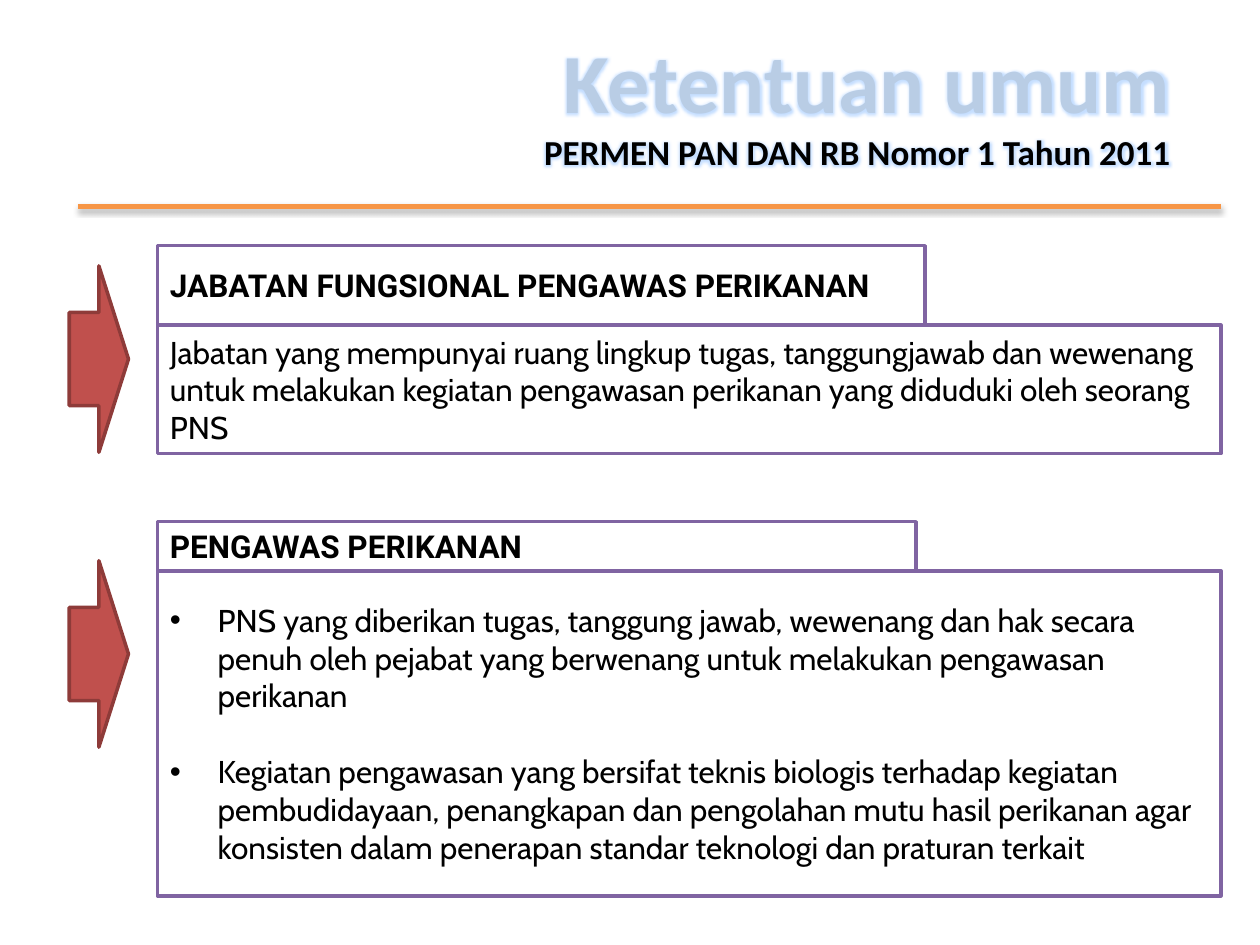
from lxml import etree
from pptx import Presentation
from pptx.dml.color import RGBColor
from pptx.enum.shapes import MSO_CONNECTOR, MSO_SHAPE
from pptx.enum.text import MSO_ANCHOR, PP_ALIGN
from pptx.oxml.ns import qn
from pptx.util import Inches, Pt

RECTANGLE, RIGHT_ARROW = MSO_SHAPE.RECTANGLE, MSO_SHAPE.RIGHT_ARROW
STRAIGHT = MSO_CONNECTOR.STRAIGHT
MIDDLE, BOTTOM = MSO_ANCHOR.MIDDLE, MSO_ANCHOR.BOTTOM
LEFT, RIGHT = PP_ALIGN.LEFT, PP_ALIGN.RIGHT

COLORS = {
    "white": "FFFFFF",
    "black": "000000",
    "title": "B9CDE5",
    "glow": "9FC9FF",
    "rule": "F79646",
    "border": "8064A2",
    "arrow": "C0504D",
    "arrow_border": "8E3B39",
}
BOX_LEFT = 1.25
BODY_WIDTH = 8.44


def rgb(name):
    return RGBColor.from_string(COLORS[name])


def add_effect(parent, kind, color, alpha, **attributes):
    effects = etree.SubElement(parent, qn("a:effectLst"))
    effect = etree.SubElement(effects, qn(f"a:{kind}"), attributes)
    tint = etree.SubElement(effect, qn("a:srgbClr"), val=COLORS[color])
    etree.SubElement(tint, qn("a:alpha"), val=str(alpha * 1000))
    return effects


def add_run(paragraph, text, font, size, bold=False, color="black"):
    run = paragraph.add_run()
    run.text = text
    run.font.name = font
    run.font.size = Pt(size)
    run.font.bold = bold
    run.font.color.rgb = rgb(color)
    return run


def add_glow(run):
    properties = run.font._element
    effects = add_effect(properties, "glow", "glow", 60, rad=str(Pt(5)))
    properties.find(qn("a:solidFill")).addnext(effects)


def add_bullet(paragraph):
    properties = paragraph._p.get_or_add_pPr()
    properties.set("marL", str(Inches(0.38)))
    properties.set("indent", str(-Inches(0.38)))
    etree.SubElement(properties, qn("a:buFont"), typeface="Arial")
    etree.SubElement(properties, qn("a:buChar"), char="•")


def add_title(slide, title, subtitle):
    box = slide.shapes.add_textbox(Inches(2.34), Inches(0.7), Inches(7.05), Inches(1.17))
    frame = box.text_frame
    frame.word_wrap = True
    frame.vertical_anchor = BOTTOM
    frame.margin_bottom = Inches(0.5)
    heading, subheading = frame.paragraphs[0], frame.add_paragraph()
    heading.alignment = subheading.alignment = RIGHT
    add_glow(add_run(heading, title, "Calibri", 48, True, "title"))
    add_glow(add_run(subheading, subtitle, "Calibri", 20, True))


def add_rule(slide):
    rule = slide.shapes.add_connector(
        STRAIGHT, Inches(0.62), Inches(1.64), Inches(9.69), Inches(1.64))
    rule.line.color.rgb = rgb("rule")
    rule.line.width = Pt(3)
    add_effect(rule._element.spPr, "outerShdw", "black", 35, blurRad=str(Pt(3.1)),
               dist=str(Pt(1.8)), dir="5400000", rotWithShape="0")


def add_figure(slide, kind, left, top, width, height, fill, border):
    shape = slide.shapes.add_shape(
        kind, Inches(left), Inches(top), Inches(width), Inches(height))
    shape.shadow.inherit = False
    shape.fill.solid()
    shape.fill.fore_color.rgb = rgb(fill)
    shape.line.color.rgb = rgb(border)
    shape.line.width = Pt(2)
    return shape


def add_box(slide, top, width, height, texts, font, bold=False, bulleted=False):
    box = add_figure(slide, RECTANGLE, BOX_LEFT, top, width, height, "white", "border")
    frame = box.text_frame
    frame.word_wrap = True
    frame.vertical_anchor = MIDDLE
    for index, text in enumerate(texts):
        paragraph = frame.add_paragraph() if index else frame.paragraphs[0]
        paragraph.alignment = LEFT
        if index:
            paragraph.space_before = Pt(21.8)
        if bulleted:
            add_bullet(paragraph)
        add_run(paragraph, text, font, 18, bold)


def add_definition(slide, top, heading, heading_size, texts, body_height, arrow_top,
                   bulleted=False):
    width, height = heading_size
    add_box(slide, top, width, height, [heading], "Roboto", bold=True)
    add_box(slide, top + height, BODY_WIDTH, body_height, texts, "Cabin", bulleted=bulleted)
    add_figure(slide, RIGHT_ARROW, 0.55, arrow_top, 0.47, 1.48, "arrow", "arrow_border")


def main():
    presentation = Presentation()
    presentation.slide_width = Inches(10)
    presentation.slide_height = Inches(7.5)
    slide = presentation.slides.add_slide(presentation.slide_layouts[6])
    add_title(slide, "Ketentuan umum", "PERMEN PAN DAN RB Nomor 1 Tahun 2011")
    add_rule(slide)
    add_definition(
        slide, 1.95, "JABATAN FUNGSIONAL PENGAWAS PERIKANAN", (6.09, 0.63),
        ["Jabatan yang mempunyai ruang lingkup tugas, tanggungjawab dan wewenang "
         "untuk melakukan kegiatan pengawasan perikanan yang diduduki oleh seorang PNS"],
        1.02, 2.11)
    add_definition(
        slide, 4.14, "PENGAWAS PERIKANAN", (6.02, 0.39),
        ["PNS yang diberikan tugas, tanggung jawab, wewenang dan hak secara penuh oleh "
         "pejabat yang berwenang untuk melakukan pengawasan perikanan",
         "Kegiatan pengawasan yang bersifat teknis biologis terhadap kegiatan "
         "pembudidayaan, penangkapan dan pengolahan mutu hasil perikanan agar "
         "konsisten dalam penerapan standar teknologi dan praturan terkait"],
        2.58, 4.45, bulleted=True)
    presentation.save("out.pptx")


if __name__ == "__main__":
    main()
